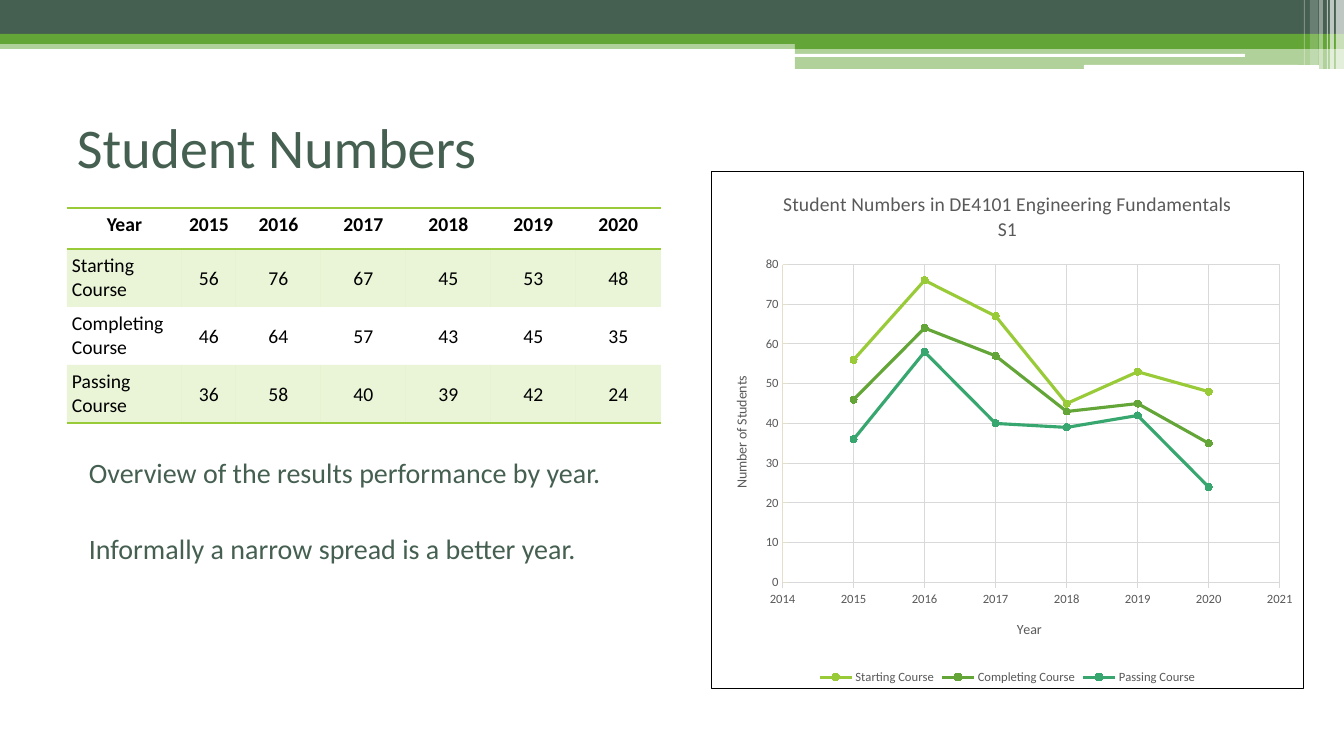
"""Build the Student Numbers slide: a green banner, a table, a chart and notes on it."""
from lxml.etree import SubElement
from pptx import Presentation
from pptx.chart.data import XyChartData
from pptx.dml.color import RGBColor
from pptx.enum.chart import XL_CHART_TYPE, XL_LEGEND_POSITION, XL_MARKER_STYLE, XL_TICK_MARK
from pptx.enum.shapes import MSO_SHAPE
from pptx.enum.text import MSO_ANCHOR, PP_ALIGN
from pptx.oxml import parse_xml
from pptx.oxml.ns import nsdecls, qn
from pptx.util import Emu, Pt

FONT = "Calibri"
DARK, GREEN, LIME, TEAL = "455F51", "63A537", "99CB38", "37A76F"
WHITE, BLACK, GREY, GRID = "FFFFFF", "000000", "595959", "D9D9D9"
NO_STYLE = "{2D5ABB26-0587-4C30-8999-92F81FD0307C}"

YEARS = [2015, 2016, 2017, 2018, 2019, 2020]
STUDENTS = {
    "Starting Course": [56, 76, 67, 45, 53, 48],
    "Completing Course": [46, 64, 57, 43, 45, 35],
    "Passing Course": [36, 58, 40, 39, 42, 24],
}
BANNER = [
    (0, 40, 1344, 9, GREEN, 50),
    (0, 0, 1344, 34, DARK, 100),
    (0, 34, 1344, 10, GREEN, 100),
    (795, 39, 549, 10, GREEN, 100),
    (795, 49, 549, 20, GREEN, 50),
]
WHITE_LINES = [(794, 54, 451, 3), (1084, 65, 235, 4)]
WHITE_STRIPES = [
    (1336, 8, 69, 65), (1330, 4, 69, 65), (1327, 1, 69, 60),
    (1319, 4, 69, 40), (1310, 8, 65, 20), (1304, 1, 65, 30),
]


def px(length):
    """Turn px, at 100.8 to the inch, into EMU."""
    return Emu(round(length * 9144000 / 1008))


def box(left, top, width, height):
    """Return a place in px as four EMU lengths."""
    return px(left), px(top), px(width), px(height)


def colour(value):
    """Turn a hex string into a colour."""
    return RGBColor.from_string(value)


def paint(fill, properties, value, opacity=100):
    """Fill solidly, with the given opacity in percent."""
    fill.solid()
    fill.fore_color.rgb = colour(value)
    if opacity < 100:
        tint = properties.find(qn("a:solidFill")).find(qn("a:srgbClr"))
        SubElement(tint, qn("a:alpha"), val=str(opacity * 1000))


def style_font(font, size, value, bold=False):
    """Set face, size, colour and weight of a font."""
    font.name = FONT
    font.size = Pt(size)
    font.bold = bold
    font.color.rgb = colour(value)


def style_line(line, value, width):
    """Set colour and width in points of a line."""
    line.color.rgb = colour(value)
    line.width = Pt(width)


def add_bar(slide, place, value, opacity=100, kind=MSO_SHAPE.RECTANGLE):
    """Add one borderless banner bar."""
    shape = slide.shapes.add_shape(kind, *box(*place))
    shape.shadow.inherit = False
    shape.line.fill.background()
    paint(shape.fill, shape.element.spPr, value, opacity)


def add_banner(slide):
    """Add the green bands with their white lines and stripes."""
    for *place, value, opacity in BANNER:
        add_bar(slide, place, value, opacity)
    for place in WHITE_LINES:
        add_bar(slide, place, WHITE, kind=MSO_SHAPE.ROUNDED_RECTANGLE)
    for left, width, height, opacity in WHITE_STRIPES:
        add_bar(slide, (left, 0, width, height), WHITE, opacity)


def add_text(slide, place, lines, size, anchor=MSO_ANCHOR.TOP, indent=0, before=0, gap=0):
    """Add a text box with one paragraph for each line."""
    text_frame = slide.shapes.add_textbox(*box(*place)).text_frame
    text_frame.word_wrap = True
    text_frame.vertical_anchor = anchor
    text_frame.text = "\n".join(lines)
    for index, paragraph in enumerate(text_frame.paragraphs):
        paragraph.space_before = Pt(gap if index else before)
        paragraph._p.get_or_add_pPr().set("marL", str(px(indent)))
        style_font(paragraph.runs[0].font, size, DARK)


def add_borders(properties, sides):
    """Put lime lines on the named sides of a cell."""
    for index, side in enumerate(sides):
        properties.insert(index, parse_xml(
            f'<a:{side} {nsdecls("a")} w="12700"><a:solidFill>'
            f'<a:srgbClr val="{LIME}"/></a:solidFill></a:{side}>'))


def fill_cell(cell, value, row, column):
    """Write and format one table cell."""
    labelled = row == 0 or column == 0
    cell.text = str(value)
    margin = px(5 if labelled else 0)
    cell.margin_left = cell.margin_right = cell.margin_bottom = margin
    cell.margin_top = px(5 if labelled else 1)
    cell.vertical_anchor = MSO_ANCHOR.TOP if labelled else MSO_ANCHOR.MIDDLE
    paragraph = cell.text_frame.paragraphs[0]
    paragraph.alignment = PP_ALIGN.LEFT if row and not column else PP_ALIGN.CENTER
    style_font(paragraph.runs[0].font, 14, BLACK, row == 0)
    properties = cell._tc.get_or_add_tcPr()
    if row % 2:
        paint(cell.fill, properties, LIME, 20)
    else:
        cell.fill.background()
    add_borders(properties, {0: ["lnT", "lnB"], len(STUDENTS): ["lnB"]}.get(row, []))


def add_student_table(slide):
    """Add the table of student numbers by year."""
    rows = [["Year", *YEARS]] + [[name, *values] for name, values in STUDENTS.items()]
    frame = slide.shapes.add_table(len(rows), len(rows[0]), *box(67, 208, 594, 215))
    table = frame.table
    table.first_row = table.horz_banding = False
    table._tbl.tblPr.find(qn("a:tableStyleId")).text = NO_STYLE
    for column, width in zip(table.columns, [115, 54] + [85] * 5):
        column.width = px(width)
    for row, values in enumerate(rows):
        table.rows[row].height = px(58 if row else 41)
        for column, value in enumerate(values):
            fill_cell(table.cell(row, column), value, row, column)


def add_title(titled, text, size):
    """Title a chart or an axis."""
    text_frame = getattr(titled, "chart_title", None) or titled.axis_title
    text_frame = text_frame.text_frame
    text_frame.text = text
    style_font(text_frame.paragraphs[0].runs[0].font, size, GREY)


def style_axis(axis, title, limits, step, line, tick):
    """Set title, scale, labels and grid of an axis."""
    add_title(axis, title, 10)
    axis.minimum_scale, axis.maximum_scale = limits
    axis.major_unit = step
    axis.major_tick_mark = tick
    axis.minor_tick_mark = XL_TICK_MARK.NONE
    axis.has_major_gridlines = True
    style_line(axis.major_gridlines.format.line, GRID, 0.75)
    style_line(axis.format.line, line, 0.75)
    style_font(axis.tick_labels.font, 9, GREY)


def frame_chart(chart):
    """Give the chart a white ground, a black border and a fixed plot area."""
    space = chart._chartSpace
    space.find(qn("c:chart")).addnext(parse_xml(
        f'<c:spPr {nsdecls("c", "a")}><a:solidFill><a:srgbClr val="{WHITE}"/></a:solidFill>'
        f'<a:ln w="9525"><a:solidFill><a:srgbClr val="{BLACK}"/></a:solidFill></a:ln></c:spPr>'))
    plot_area = space.chart.plotArea
    for layout in plot_area.findall(qn("c:layout")):
        plot_area.remove(layout)
    layout = parse_xml(f'<c:layout {nsdecls("c")}><c:manualLayout/></c:layout>')
    settings = {"layoutTarget": "inner", "xMode": "edge", "yMode": "edge",
                "x": 0.12, "y": 0.18, "w": 0.84, "h": 0.615}
    for name, value in settings.items():
        SubElement(layout[0], qn(f"c:{name}"), val=str(value))
    plot_area.insert(0, layout)


def add_student_chart(slide):
    """Add the line chart of student numbers by year."""
    data = XyChartData()
    for name, values in STUDENTS.items():
        series = data.add_series(name)
        for year, value in zip(YEARS, values):
            series.add_data_point(year, value)
    chart = slide.shapes.add_chart(
        XL_CHART_TYPE.XY_SCATTER_LINES, *box(711, 171, 593, 518), data).chart
    style_font(chart.font, 10, BLACK)
    add_title(chart, "Student Numbers in DE4101 Engineering Fundamentals S1", 14)
    style_axis(chart.category_axis, "Year", (2014, 2021), 1, GRID, XL_TICK_MARK.CROSS)
    style_axis(chart.value_axis, "Number of Students", (0, 80), 10, "E2DFCC", XL_TICK_MARK.INSIDE)
    chart.has_legend = True
    chart.legend.position = XL_LEGEND_POSITION.BOTTOM
    chart.legend.include_in_layout = False
    style_font(chart.legend.font, 9, GREY)
    chart.plots[0].vary_by_categories = False
    for series, value in zip(chart.plots[0].series, [LIME, GREEN, TEAL]):
        series.smooth = False
        style_line(series.format.line, value, 2.25)
        series.marker.style = XL_MARKER_STYLE.CIRCLE
        series.marker.size = 5
        series.marker.format.fill.solid()
        series.marker.format.fill.fore_color.rgb = colour(value)
        style_line(series.marker.format.line, value, 0.75)
    frame_chart(chart)


def main():
    """Build and save the slide."""
    presentation = Presentation()
    presentation.slide_width, presentation.slide_height = px(1344), px(756)
    slide = presentation.slides.add_slide(presentation.slide_layouts[6])
    add_banner(slide)
    add_text(slide, (67, 87, 1210, 118), ["Student Numbers"], 40, MSO_ANCHOR.MIDDLE)
    add_student_table(slide)
    add_student_chart(slide)
    add_text(slide, (67, 451, 594, 164),
             ["Overview of the results performance by year.",
              "Informally a narrow spread is a better year."],
             20, indent=12, before=3, gap=30)
    presentation.save("out.pptx")


if __name__ == "__main__":
    main()
